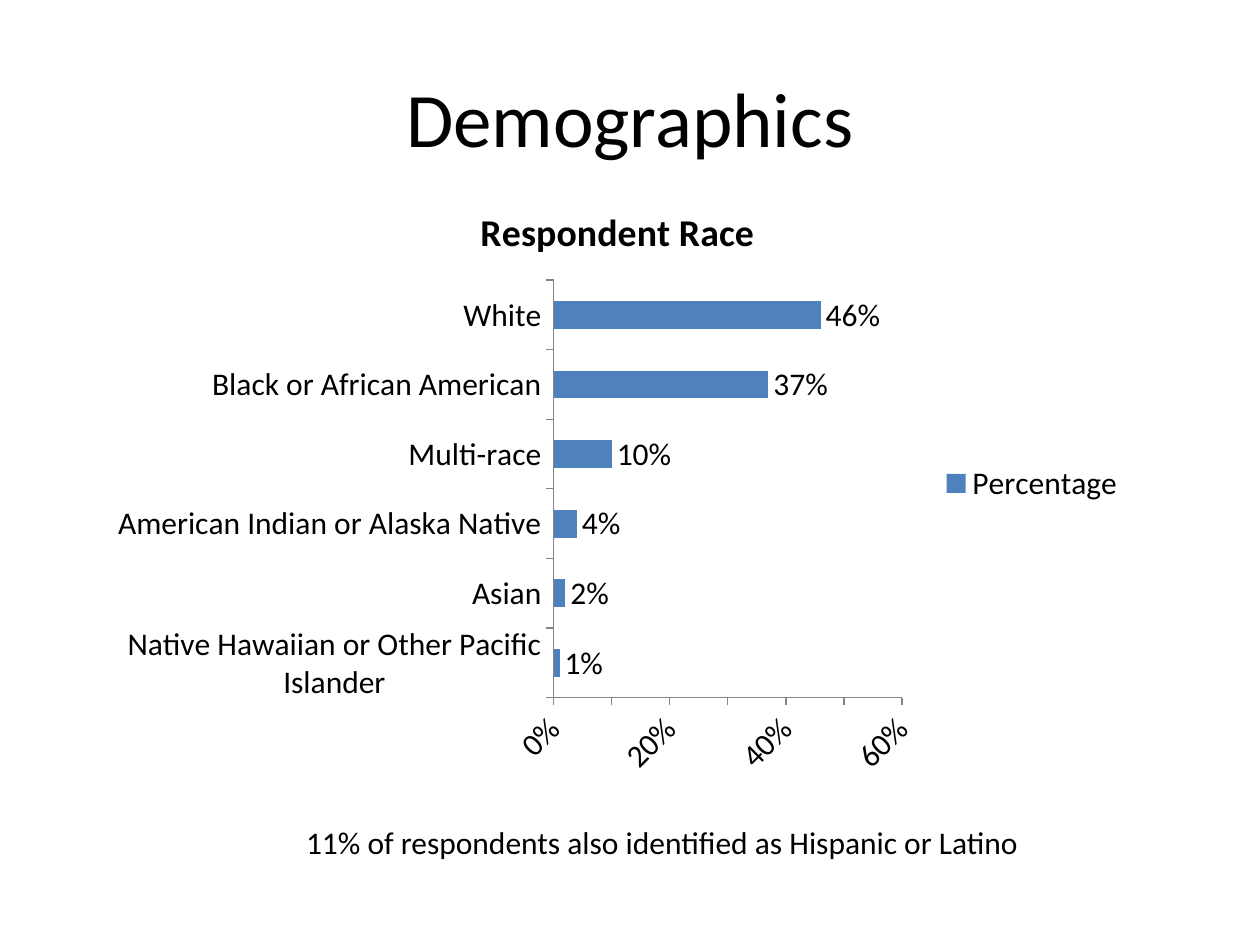
from dataclasses import dataclass

from pptx import Presentation
from pptx.chart.axis import _BaseAxis as Axis
from pptx.chart.data import CategoryChartData as ChartData
from pptx.dml.color import RGBColor
from pptx.enum.chart import XL_LABEL_POSITION as LabelPos
from pptx.enum.chart import XL_LEGEND_POSITION as LegendPos
from pptx.enum.chart import XL_TICK_MARK as Tick
from pptx.enum.chart import XL_CHART_TYPE as ChartType
from pptx.enum.text import MSO_ANCHOR as Anchor
from pptx.enum.text import PP_ALIGN as Align
from pptx.slide import Slide
from pptx.text.text import Font
from pptx.util import Cm, Pt

BLACK = RGBColor(0x00, 0x00, 0x00)
BLUE = RGBColor(0x4F, 0x81, 0xBD)
GRAY = RGBColor(0x86, 0x86, 0x86)
FONT = "Calibri"


@dataclass(frozen=True)
class Label:
    text: str
    left: float
    top: float
    width: float
    height: float
    size: int
    align: Align
    anchor: Anchor
    wrap: bool


@dataclass(frozen=True)
class Share:
    race: str
    value: float


LABELS = [
    Label("Demographics", 1.27, 0.76, 22.86, 3.18, 44,
          Align.CENTER, Anchor.MIDDLE, True),
    Label("11% of respondents also identified as Hispanic or Latino",
          5.92, 16.46, 15.06, 1.02, 18, Align.LEFT, Anchor.TOP, False),
]

SHARES = [
    Share("Native Hawaiian or Other Pacific Islander", 0.01),
    Share("Asian", 0.02),
    Share("American Indian or Alaska Native", 0.04),
    Share("Multi-race", 0.1),
    Share("Black or African American", 0.37),
    Share("White", 0.46),
]


def style_font(font: Font, size: float, bold: bool = False) -> None:
    font.name = FONT
    font.size = Pt(size)
    font.bold = bold
    font.color.rgb = BLACK


def add_label(s: Slide, label: Label) -> None:
    sp = s.shapes.add_textbox(Cm(label.left), Cm(label.top),
                              Cm(label.width), Cm(label.height))
    tf = sp.text_frame
    tf.word_wrap = label.wrap
    tf.vertical_anchor = label.anchor
    p = tf.paragraphs[0]
    p.alignment = label.align
    r = p.add_run()
    r.text = label.text
    style_font(r.font, label.size)


def style_axis(axis: Axis) -> None:
    axis.has_major_gridlines = False
    axis.major_tick_mark = Tick.OUTSIDE
    axis.minor_tick_mark = Tick.NONE
    axis.format.line.color.rgb = GRAY
    axis.format.line.width = Pt(0.75)
    style_font(axis.tick_labels.font, 18)


def add_race_chart(s: Slide, shares: list[Share]) -> None:
    data = ChartData(number_format="0%")
    data.categories = [share.race for share in shares]
    data.add_series("Percentage", [share.value for share in shares])
    chart = s.shapes.add_chart(ChartType.BAR_CLUSTERED, Cm(1.96), Cm(3.61),
                               Cm(20.98), Cm(12.27), data).chart
    style_font(chart.font, 18)

    chart.has_title = True
    r = chart.chart_title.text_frame.paragraphs[0].add_run()
    r.text = "Respondent Race"
    style_font(r.font, 21.6, bold=True)
    chart.chart_title.include_in_layout = False

    chart.has_legend = True
    chart.legend.position = LegendPos.RIGHT
    chart.legend.include_in_layout = False

    style_axis(chart.category_axis)
    axis = chart.value_axis
    style_axis(axis)
    axis.minimum_scale, axis.maximum_scale, axis.major_unit = 0, 0.6, 0.1
    axis.tick_labels.number_format = "0%"
    axis.tick_labels.number_format_is_linked = False
    axis._element.txPr.bodyPr.set("rot", "-2700000")

    plot = chart.plots[0]
    plot.gap_width = 150
    plot.vary_by_categories = False
    fill = plot.series[0].format.fill
    fill.solid()
    fill.fore_color.rgb = BLUE
    plot.has_data_labels = True
    labels = plot.data_labels
    labels.show_value = True
    labels.position = LabelPos.OUTSIDE_END
    labels.number_format = "0%"
    labels.number_format_is_linked = False
    style_font(labels.font, 18)


def main() -> None:
    prs = Presentation()
    prs.slide_width, prs.slide_height = Cm(25.4), Cm(19.05)
    s = prs.slides.add_slide(prs.slide_layouts[6])
    add_race_chart(s, SHARES)
    for label in LABELS:
        add_label(s, label)
    prs.save("out.pptx")


if __name__ == "__main__":
    main()
